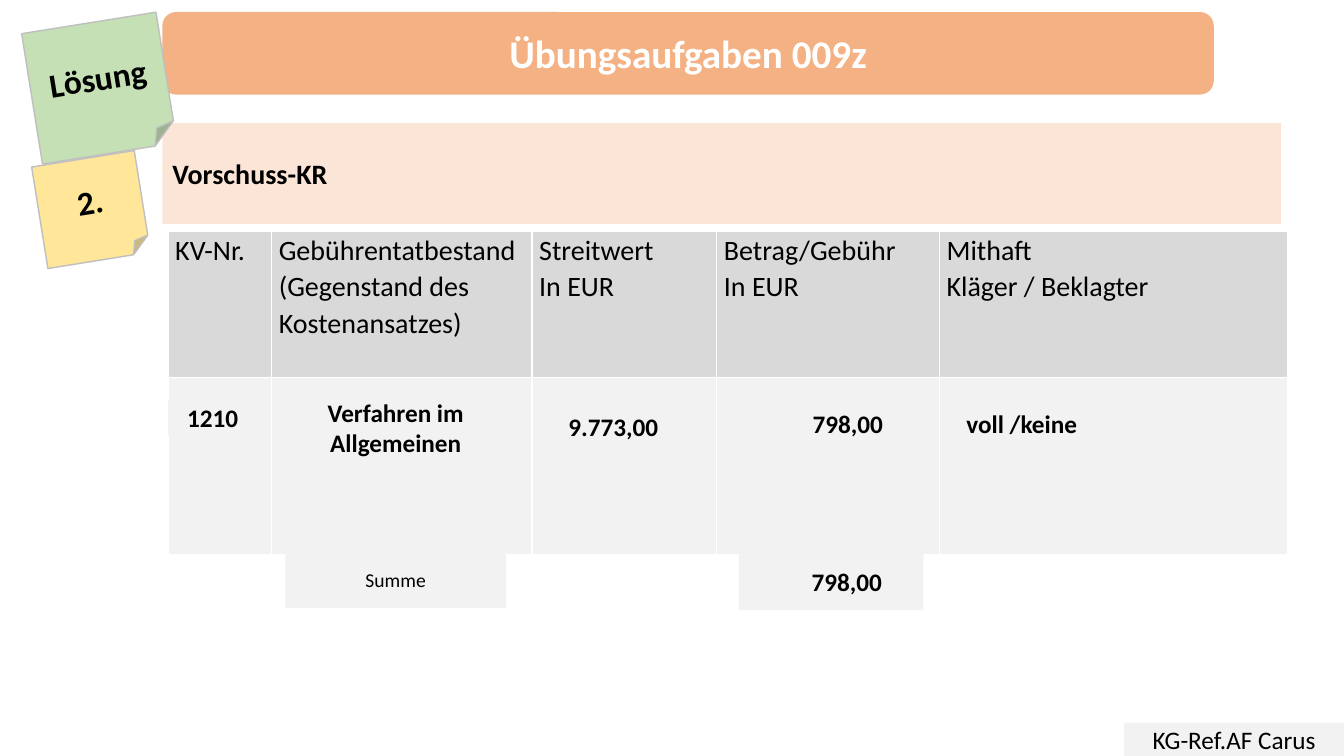
"""Build the solution slide with its fee table, sticky notes and sum row."""
from dataclasses import dataclass

from lxml.etree import SubElement
from pptx import Presentation
from pptx.dml.color import RGBColor
from pptx.enum.shapes import MSO_SHAPE
from pptx.enum.text import MSO_ANCHOR, PP_ALIGN
from pptx.oxml.ns import qn
from pptx.slide import Slide
from pptx.table import _Cell
from pptx.text.text import TextFrame
from pptx.util import Pt

FONT = "Calibri"
LINE_SPACING = 1.07
NOTE_ROTATION = 350.9
COLORS = {
    "black": "000000",
    "white": "FFFFFF",
    "orange": "F4B183",
    "peach": "FBE5D6",
    "green": "C5E0B4",
    "yellow": "FFE699",
    "note_line": "BFBFBF",
    "header": "D9D9D9",
    "body": "F2F2F2",
}
TABLE_LEFT, TABLE_TOP = 120, 165
COLUMN_WIDTHS = [74, 186, 132, 159, 248.5]
ROW_HEIGHTS = [104.5, 126.5]
HEADERS = [
    ["KV-Nr."],
    ["Gebührentatbestand", "(Gegenstand des Kostenansatzes)"],
    ["Streitwert", "In EUR"],
    ["Betrag/Gebühr", "In EUR"],
    ["Mithaft", "Kläger / Beklagter"],
]


@dataclass(frozen=True)
class Box:
    """Describe one filled shape with text; lengths are in points."""

    text: str
    left: float
    top: float
    width: float
    height: float
    fill: str = "body"
    size: float = 18
    bold: bool = True
    color: str = "black"
    align: PP_ALIGN = PP_ALIGN.CENTER
    kind: MSO_SHAPE = MSO_SHAPE.RECTANGLE
    spacing: float = 1.0
    inset_left: float = 7.2
    inset_bottom: float = 3.6


@dataclass(frozen=True)
class Note(Box):
    """Describe a tilted sticky note."""

    size: float = 24
    kind: MSO_SHAPE = MSO_SHAPE.FOLDED_CORNER


@dataclass(frozen=True)
class Entry(Box):
    """Describe a left-aligned table entry."""

    align: PP_ALIGN = PP_ALIGN.LEFT
    spacing: float = LINE_SPACING


BOXES = [
    Box("Übungsaufgaben 009z", 116, 8.6, 751, 59, "orange", 28, color="white",
        kind=MSO_SHAPE.ROUNDED_RECTANGLE),
    Box("Vorschuss-KR", 116, 88, 799, 72, "peach", 20, align=PP_ALIGN.LEFT),
    Note("Lösung", 22.3, 15.8, 97.2, 94.3, "green"),
    Box("KG-Ref.AF Carus", 803, 516.2, 157, 23.8, bold=False),
    Box("1210", 120, 286, 64, 25),
    Box("Verfahren im Allgemeinen", 203.8, 279.4, 157.7, 74.2, inset_bottom=25.6),
    Entry("9.773,00", 399, 289.4, 93.6, 29.5),
    Entry("798,00", 545, 281, 98, 41.8, inset_left=35.5),
    Entry("voll /keine", 683.3, 283, 188, 37.4),
    Note("2.", 28, 113, 74.2, 73.4, "yellow"),
    Box("Summe", 203.8, 394, 157.7, 40.3, size=14, bold=False),
    Entry("798,00", 527.8, 394, 131.8, 41.8, inset_left=52),
]


def rgb(name: str) -> RGBColor:
    """Return the named colour."""
    return RGBColor.from_string(COLORS[name])


def write_lines(frame: TextFrame, lines: list[str], size: float, bold: bool,
                color: str, align: PP_ALIGN, spacing: float) -> None:
    """Write each line as one paragraph with one run."""
    for index, line in enumerate(lines):
        paragraph = frame.add_paragraph() if index else frame.paragraphs[0]
        paragraph.alignment = align
        paragraph.line_spacing = spacing
        run = paragraph.add_run()
        run.text = line
        run.font.name = FONT
        run.font.size = Pt(size)
        run.font.bold = bold
        run.font.color.rgb = rgb(color)


def add_box(slide: Slide, box: Box) -> None:
    """Draw one box or sticky note."""
    shape = slide.shapes.add_shape(
        box.kind, Pt(box.left), Pt(box.top), Pt(box.width), Pt(box.height))
    shape.shadow.inherit = False
    shape.fill.solid()
    shape.fill.fore_color.rgb = rgb(box.fill)
    if isinstance(box, Note):
        shape.rotation = NOTE_ROTATION
        shape.line.color.rgb = rgb("note_line")
        shape.line.width = Pt(1)
    else:
        shape.line.fill.background()
    frame = shape.text_frame
    frame.word_wrap = True
    frame.vertical_anchor = MSO_ANCHOR.MIDDLE
    frame.margin_left = Pt(box.inset_left)
    frame.margin_bottom = Pt(box.inset_bottom)
    write_lines(frame, [box.text], box.size, box.bold, box.color, box.align, box.spacing)


def style_cell(cell: _Cell, fill: str) -> None:
    """Give a cell white borders, narrow margins and a fill."""
    properties = cell._tc.get_or_add_tcPr()
    for side in ("lnL", "lnR", "lnT", "lnB"):
        line = SubElement(properties, qn(f"a:{side}"), w=str(Pt(1)))
        solid = SubElement(line, qn("a:solidFill"))
        SubElement(solid, qn("a:srgbClr"), val=COLORS["white"])
    cell.margin_left = cell.margin_right = Pt(5.2)
    cell.margin_top = cell.margin_bottom = Pt(0)
    cell.fill.solid()
    cell.fill.fore_color.rgb = rgb(fill)


def add_fee_table(slide: Slide) -> None:
    """Draw the header row and the empty row behind the entries."""
    table = slide.shapes.add_table(
        len(ROW_HEIGHTS), len(COLUMN_WIDTHS), Pt(TABLE_LEFT), Pt(TABLE_TOP),
        Pt(sum(COLUMN_WIDTHS)), Pt(sum(ROW_HEIGHTS))).table
    table.first_row = table.horz_banding = False
    for row, height in zip(table.rows, ROW_HEIGHTS):
        row.height = Pt(height)
    for index, (width, lines) in enumerate(zip(COLUMN_WIDTHS, HEADERS)):
        table.columns[index].width = Pt(width)
        header = table.cell(0, index)
        style_cell(header, "header")
        style_cell(table.cell(1, index), "body")
        write_lines(header.text_frame, lines, 20, False, "black",
                    PP_ALIGN.LEFT, LINE_SPACING)


def main() -> None:
    """Build and save the slide."""
    presentation = Presentation()
    presentation.slide_width = Pt(960)
    presentation.slide_height = Pt(540)
    slide = presentation.slides.add_slide(presentation.slide_layouts[6])
    add_fee_table(slide)
    for box in BOXES:
        add_box(slide, box)
    presentation.save("out.pptx")


if __name__ == "__main__":
    main()
